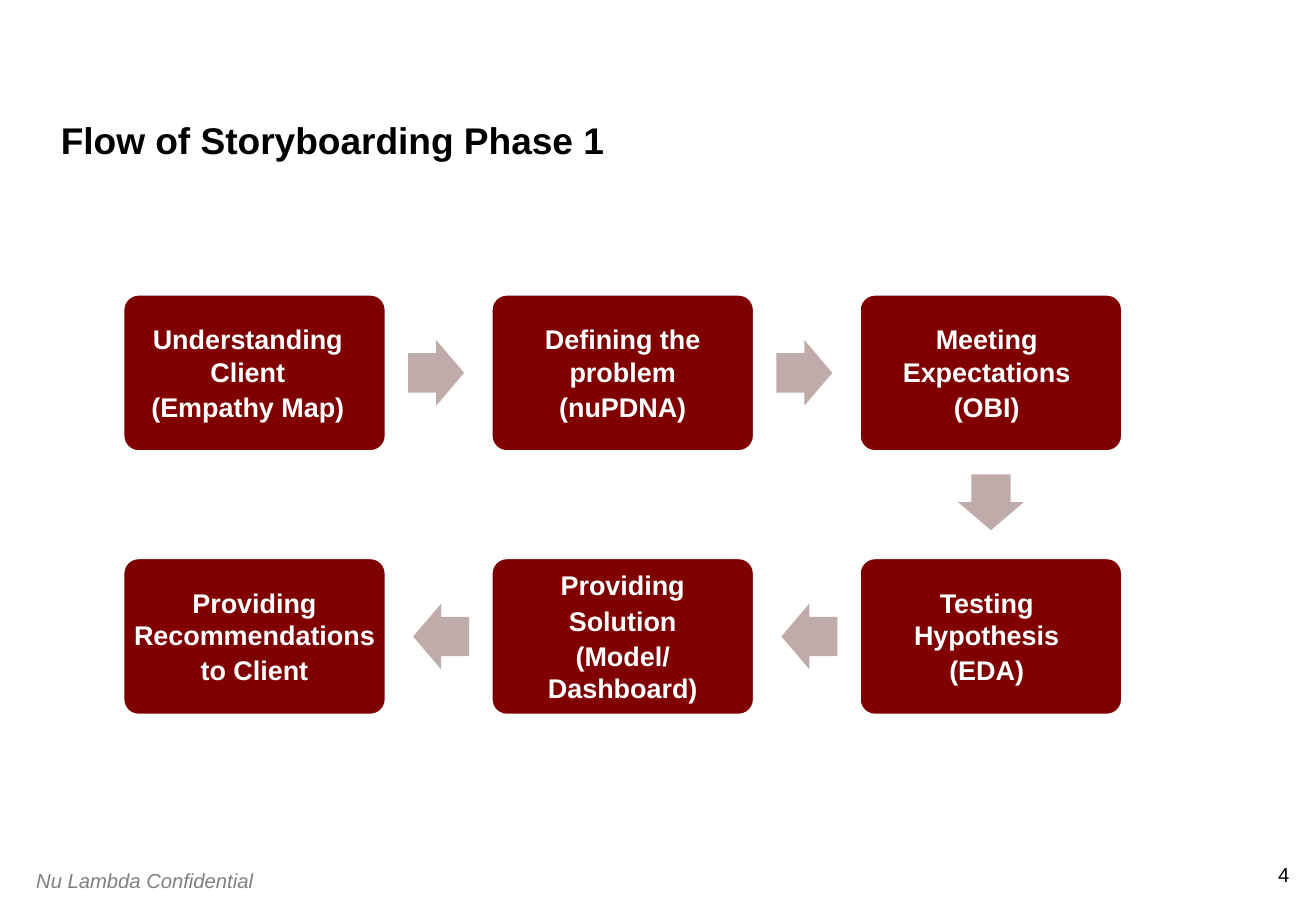
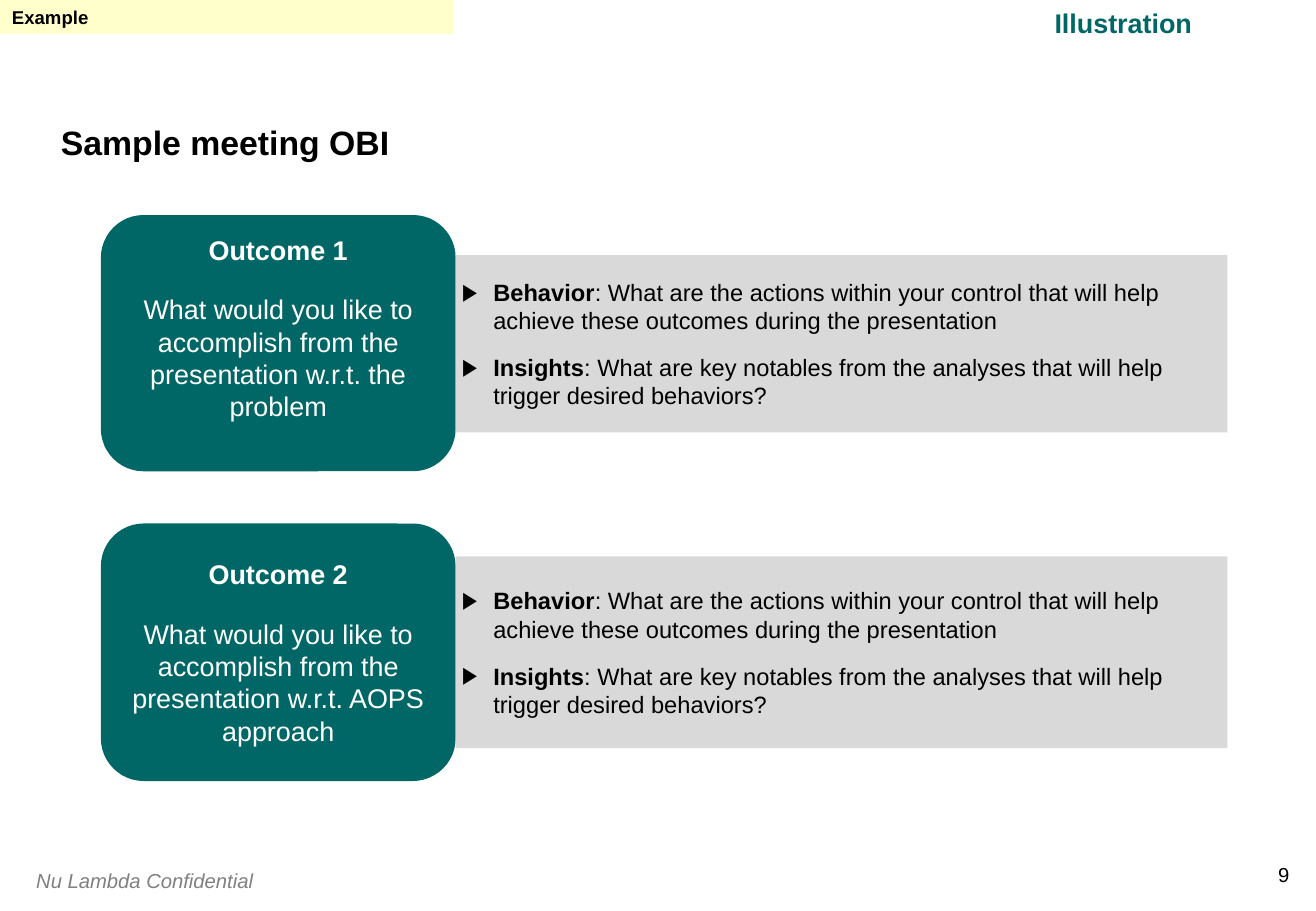
from itertools import pairwise
from lxml import etree
from pptx import Presentation
from pptx.dml.color import RGBColor
from pptx.enum.shapes import MSO_SHAPE
from pptx.enum.text import MSO_ANCHOR, MSO_AUTO_SIZE, PP_ALIGN
from pptx.oxml.ns import qn
from pptx.util import Inches, Pt

RECTANGLE, ROUNDED = MSO_SHAPE.RECTANGLE, MSO_SHAPE.ROUNDED_RECTANGLE
ARROW = MSO_SHAPE.RIGHT_ARROW
LEFT, CENTER, RIGHT = PP_ALIGN.LEFT, PP_ALIGN.CENTER, PP_ALIGN.RIGHT
TOP, MIDDLE, BOTTOM = MSO_ANCHOR.TOP, MSO_ANCHOR.MIDDLE, MSO_ANCHOR.BOTTOM

FONT = "Arial"
COLORS = {
    "black": "000000", "white": "FFFFFF", "footer": "808080",
    "maroon": "800000", "arrow": "C0ABAB",
    "teal": "006666", "panel": "D9D9D9", "tag": "FFFFCC",
}
FOOTER = "Nu Lambda Confidential"
TITLE_BOX = (0.5, 0.42, 9.83, 0.92)

# Column, row, left and right text inset, lines; in reading order of the flow
STEPS = [
    (0, 0, 0.17, 0.28, ["Understanding Client", "(Empathy Map)"]),
    (1, 0, 0.22, 0.22, ["Defining the problem", "(nuPDNA)"]),
    (2, 0, 0.19, 0.26, ["Meeting Expectations", "(OBI)"]),
    (2, 1, 0.19, 0.26, ["Testing Hypothesis", "(EDA)"]),
    (1, 1, 0.05, 0.05, ["Providing", "Solution", "(Model/Dashboard)"]),
    (0, 1, 0.05, 0.05, ["Providing Recommendations", "to Client"]),
]
CARD_LEFT, CARD_TOP, CARD_WIDTH, CARD_HEIGHT = 1.01, 2.42, 2.17, 1.3
COLUMN_PITCH, ROW_PITCH = 3.03, 2.17
ARROW_LENGTH, ARROW_BREADTH, ARROW_LAG = 0.46, 0.54, 0.02
ROTATIONS = {(1, 0): 0, (0, 1): 90, (-1, 0): 180}

# Heading, question, outcome top and height, panel top and height, anchor
OUTCOMES = [
    ("Outcome 1", "What would you like to accomplish from the presentation "
     "w.r.t. the problem", 1.77, 2.11, 2.1, 1.46, TOP),
    ("Outcome 2", "What would you like to accomplish from the presentation "
     "w.r.t. AOPS approach", 4.31, 2.12, 4.58, 1.58, MIDDLE),
]
OUTCOME_LEFT, OUTCOME_WIDTH, PANEL_WIDTH = 0.83, 2.92, 6.35
PROMPTS = [
    ("Behavior", ": What are the actions within your control that will help "
     "achieve these outcomes during the presentation"),
    ("Insights", ": What are key notables from the analyses that will help "
     "trigger desired behaviors?"),
]
BULLET_INDENT = Inches(0.26)


def rgb(name):
    return RGBColor.from_string(COLORS[name])


def add_block(slide, kind, box, fill, line=None):
    shape = slide.shapes.add_shape(kind, *map(Inches, box))
    shape.shadow.inherit = False
    shape.fill.solid()
    shape.fill.fore_color.rgb = rgb(fill)
    if line:
        shape.line.color.rgb = rgb(line)
        shape.line.width = Pt(2)
    else:
        shape.line.fill.background()
    return shape


def set_text(shape, paragraphs, size, color, align=LEFT, anchor=MIDDLE,
             insets=(0.1, 0.05, 0.1, 0.05), gap=0, italic=False, bullet=None):
    """Write paragraphs, each a list of (text, bold) runs, into a shape."""
    frame = shape.text_frame
    frame.word_wrap = True
    frame.auto_size = MSO_AUTO_SIZE.NONE
    frame.vertical_anchor = anchor
    (frame.margin_left, frame.margin_top,
     frame.margin_right, frame.margin_bottom) = map(Inches, insets)
    for index, runs in enumerate(paragraphs):
        paragraph = frame.add_paragraph() if index else frame.paragraphs[0]
        paragraph.alignment = align
        paragraph.space_before = Pt(gap if index else 0)
        if bullet:
            add_bullet(paragraph, bullet)
        for text, bold in runs:
            run = paragraph.add_run()
            run.text = text
            run.font.name, run.font.size = FONT, Pt(size)
            run.font.bold, run.font.italic = bold, italic
            run.font.color.rgb = rgb(color)
    return frame


def add_bullet(paragraph, character):
    properties = paragraph._p.get_or_add_pPr()
    properties.set("marL", str(BULLET_INDENT))
    properties.set("indent", str(-BULLET_INDENT))
    etree.SubElement(properties, qn("a:buFont")).set("typeface", FONT)
    etree.SubElement(properties, qn("a:buChar")).set("char", character)


def add_label(slide, box, text, size, color, bold=False, **options):
    label = slide.shapes.add_textbox(*map(Inches, box))
    set_text(label, [[(text, bold)]], size, color, **options)


def add_slide(presentation, title, title_size, number):
    """Add a slide with the shared title, footer and page number."""
    slide = presentation.slides.add_slide(presentation.slide_layouts[5])
    heading = slide.shapes.title
    (heading.left, heading.top,
     heading.width, heading.height) = map(Inches, TITLE_BOX)
    frame = set_text(heading, [[(title, True)]], title_size, "black",
                     anchor=BOTTOM, insets=(0, 0, 0, 0))
    frame.paragraphs[0].line_spacing = 0.9
    add_label(slide, (0.2, 7.1, 2.2, 0.3), FOOTER, 12, "footer", italic=True)
    add_label(slide, (10.2, 7.1, 0.41, 0.2), number, 12, "black",
              align=RIGHT, insets=(0, 0, 0, 0))
    return slide


def build_flow(presentation):
    slide = add_slide(presentation, "Flow of Storyboarding Phase 1", 22, "4")
    for column, row, left_inset, right_inset, lines in STEPS:
        box = (CARD_LEFT + column * COLUMN_PITCH, CARD_TOP + row * ROW_PITCH,
               CARD_WIDTH, CARD_HEIGHT)
        card = add_block(slide, ROUNDED, box, "maroon", "white")
        card.adjustments[0] = 0.1
        set_text(card, [[(line, True)] for line in lines], 16, "white",
                 align=CENTER, insets=(left_inset, 0, right_inset, 0), gap=1.6)

    for (column, row, *_), (next_column, next_row, *_) in pairwise(STEPS):
        across, down = next_column - column, next_row - row
        center_x = (CARD_LEFT + CARD_WIDTH / 2 - across * ARROW_LAG
                    + (column + next_column) / 2 * COLUMN_PITCH)
        center_y = (CARD_TOP + CARD_HEIGHT / 2 - down * ARROW_LAG
                    + (row + next_row) / 2 * ROW_PITCH)
        arrow = add_block(slide, ARROW, (
            center_x - ARROW_LENGTH / 2, center_y - ARROW_BREADTH / 2,
            ARROW_LENGTH, ARROW_BREADTH), "arrow")
        arrow.adjustments[0], arrow.adjustments[1] = 0.6, 0.5
        arrow.rotation = ROTATIONS[across, down]


def build_meeting(presentation):
    slide = add_slide(presentation, "Sample meeting OBI", 20, "9")
    insets = (0.05, 0.05, 0.05, 0.05)
    prompts = [[(name, True), (text, False)] for name, text in PROMPTS]
    for heading, question, top, height, panel_top, panel_height, anchor in OUTCOMES:
        outcome = add_block(slide, ROUNDED, (
            OUTCOME_LEFT, top, OUTCOME_WIDTH, height), "teal")
        set_text(outcome, [[(heading, True)], [(question, False)]], 16, "white",
                 align=CENTER, anchor=anchor, insets=insets, gap=16)
        panel = add_block(slide, RECTANGLE, (
            OUTCOME_LEFT + OUTCOME_WIDTH, panel_top,
            PANEL_WIDTH, panel_height), "panel")
        set_text(panel, prompts, 14, "black", insets=insets, gap=11, bullet="▶")

    tag = add_block(slide, RECTANGLE, (0, 0, 3.73, 0.28), "tag")
    set_text(tag, [[("Example", True)]], 11, "black")
    add_label(slide, (8.53, 0, 1.43, 0.37), "Illustration", 16, "teal",
              bold=True, align=CENTER)


def main():
    presentation = Presentation()
    presentation.slide_width = Inches(10.83)
    presentation.slide_height = Inches(7.5)
    build_flow(presentation)
    build_meeting(presentation)
    presentation.save("out.pptx")


if __name__ == "__main__":
    main()
